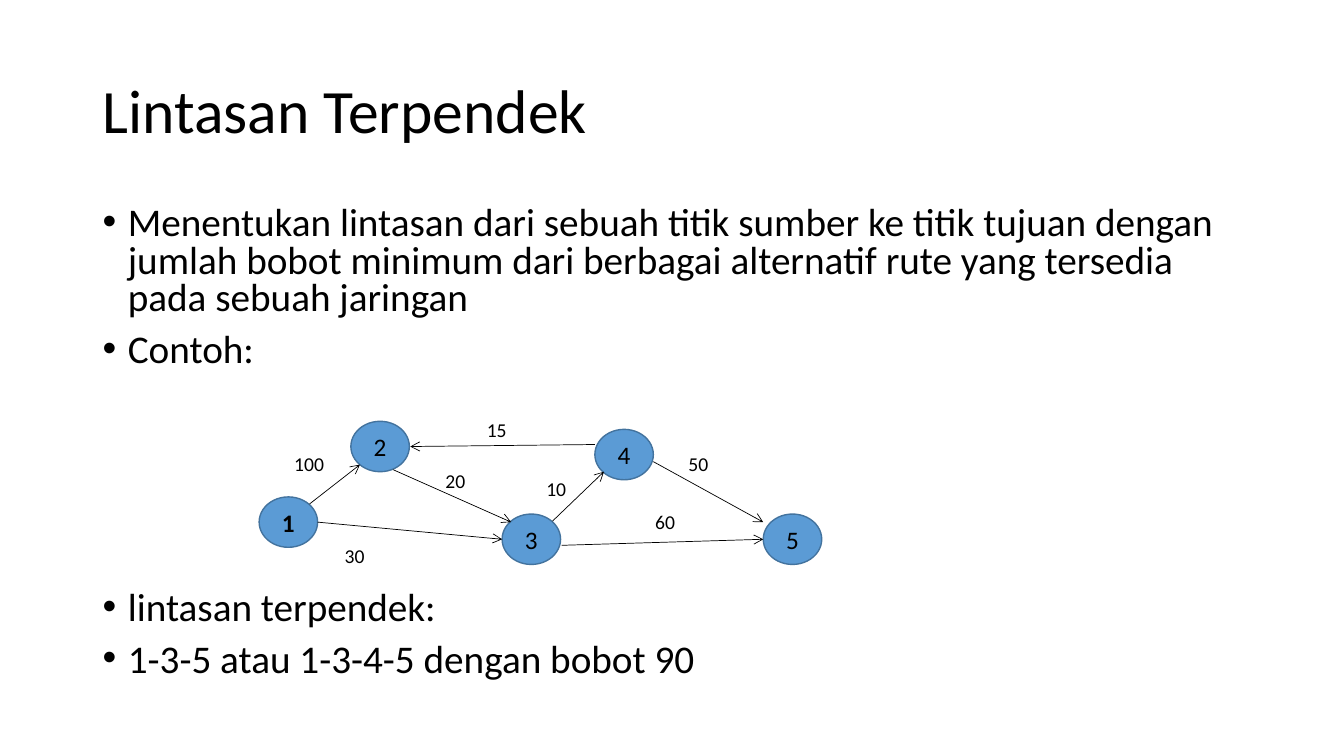
from lxml import etree
from pptx import Presentation
from pptx.dml.color import RGBColor
from pptx.enum.shapes import MSO_CONNECTOR, MSO_SHAPE
from pptx.enum.text import MSO_ANCHOR, PP_ALIGN
from pptx.oxml.ns import qn
from pptx.util import Inches, Pt

STRAIGHT, OVAL = MSO_CONNECTOR.STRAIGHT, MSO_SHAPE.OVAL
TOP, MIDDLE = MSO_ANCHOR.TOP, MSO_ANCHOR.MIDDLE
LEFT, CENTER = PP_ALIGN.LEFT, PP_ALIGN.CENTER

FONT = "Calibri"
COLORS = {"text": "000000", "node": "5B9BD5", "outline": "43739E"}

# Content
TITLE = "Lintasan Terpendek"
DEFINITION = [
    "Menentukan lintasan dari sebuah titik sumber ke titik tujuan dengan "
    "jumlah bobot minimum dari berbagai alternatif rute yang tersedia "
    "pada sebuah jaringan",
    "Contoh:",
]
ANSWER = ["lintasan terpendek:", "1-3-5 atau 1-3-4-5 dengan bobot 90"]

# Node label: left, top
NODES = {
    "1": (2.57, 4.93),
    "2": (3.48, 4.18),
    "3": (4.98, 5.1),
    "4": (5.9, 4.26),
    "5": (7.57, 5.1),
}
START_NODE = "1"
# Edge: weight, start, end, left and top of the weight
EDGES = [
    ("100", (3.07, 5), (3.57, 4.61), (2.82, 4.43)),
    ("30", (3.15, 5.18), (4.98, 5.35), (3.32, 5.35)),
    ("20", (3.9, 4.66), (5.07, 5.18), (4.32, 4.6)),
    ("10", (5.48, 5.17), (5.99, 4.68), (5.32, 4.68)),
    ("60", (5.57, 5.41), (7.57, 5.35), (6.4, 5.01)),
    ("50", (6.48, 4.58), (7.57, 5.18), (6.73, 4.43)),
    ("15", (5.9, 4.41), (4.07, 4.43), (4.73, 4.1)),
]

# Layout
MARGIN, CONTENT_WIDTH = 0.92, 11.5
NODE_WIDTH, NODE_HEIGHT = 0.58, 0.5
DIGIT_WIDTH, WEIGHT_PADDING, WEIGHT_HEIGHT = 0.1, 0.2, 0.34


def color(key):
    return RGBColor.from_string(COLORS[key])


def write(frame, lines, size, anchor=TOP, align=LEFT, bold=False, wrap=True):
    frame.word_wrap = wrap
    frame.vertical_anchor = anchor
    frame.text = "\n".join(lines)
    for paragraph in frame.paragraphs:
        paragraph.alignment = align
        for run in paragraph.runs:
            run.font.name = FONT
            run.font.size = Pt(size)
            run.font.bold = bold
            run.font.color.rgb = color("text")


def add_text(left, top, width, height, lines, size, **style):
    box = slide.shapes.add_textbox(
        Inches(left), Inches(top), Inches(width), Inches(height))
    write(box.text_frame, lines, size, **style)
    return box.text_frame


def add_bullets(top, height, lines):
    frame = add_text(MARGIN, top, CONTENT_WIDTH, height, lines, 28)
    for i, paragraph in enumerate(frame.paragraphs):
        paragraph.line_spacing = 0.8
        paragraph.space_before = Pt(10 if i else 0)
        props = paragraph._p.get_or_add_pPr()
        props.set("marL", str(Inches(0.25)))
        props.set("indent", str(Inches(-0.25)))
        etree.SubElement(props, qn("a:buFont"), typeface="Arial")
        etree.SubElement(props, qn("a:buChar"), char="•")


def add_arrow(start, end):
    arrow = slide.shapes.add_connector(
        STRAIGHT, *(Inches(v) for v in start + end))
    arrow.line.color.rgb = color("text")
    arrow.line.width = Pt(0.5)
    etree.SubElement(arrow.line._get_or_add_ln(), qn("a:tailEnd"), type="arrow")
    etree.SubElement(arrow._element.spPr, qn("a:effectLst"))


prs = Presentation()
prs.slide_width, prs.slide_height = Inches(13.33), Inches(7.5)
slide = prs.slides.add_slide(prs.slide_layouts[6])

# Title and text above and below the graph
title = add_text(MARGIN, 0.4, CONTENT_WIDTH, 1.45, [TITLE], 44, anchor=MIDDLE)
title.paragraphs[0].line_spacing = 0.9
add_bullets(2, 1.8, DEFINITION)
add_bullets(5.82, 1.3, ANSWER)

# Graph nodes
for label, (left, top) in NODES.items():
    node = slide.shapes.add_shape(
        OVAL, Inches(left), Inches(top), Inches(NODE_WIDTH), Inches(NODE_HEIGHT))
    node.shadow.inherit = False
    node.fill.solid()
    node.fill.fore_color.rgb = color("node")
    node.line.color.rgb = color("outline")
    node.line.width = Pt(1)
    write(node.text_frame, [label], 18, anchor=MIDDLE, align=CENTER,
          bold=label == START_NODE)

# Graph edges with their weights
for weight, start, end, (left, top) in EDGES:
    add_arrow(start, end)
    width = WEIGHT_PADDING + DIGIT_WIDTH * len(weight)
    add_text(left, top, width, WEIGHT_HEIGHT, [weight], 14, wrap=False)

prs.save("out.pptx")
